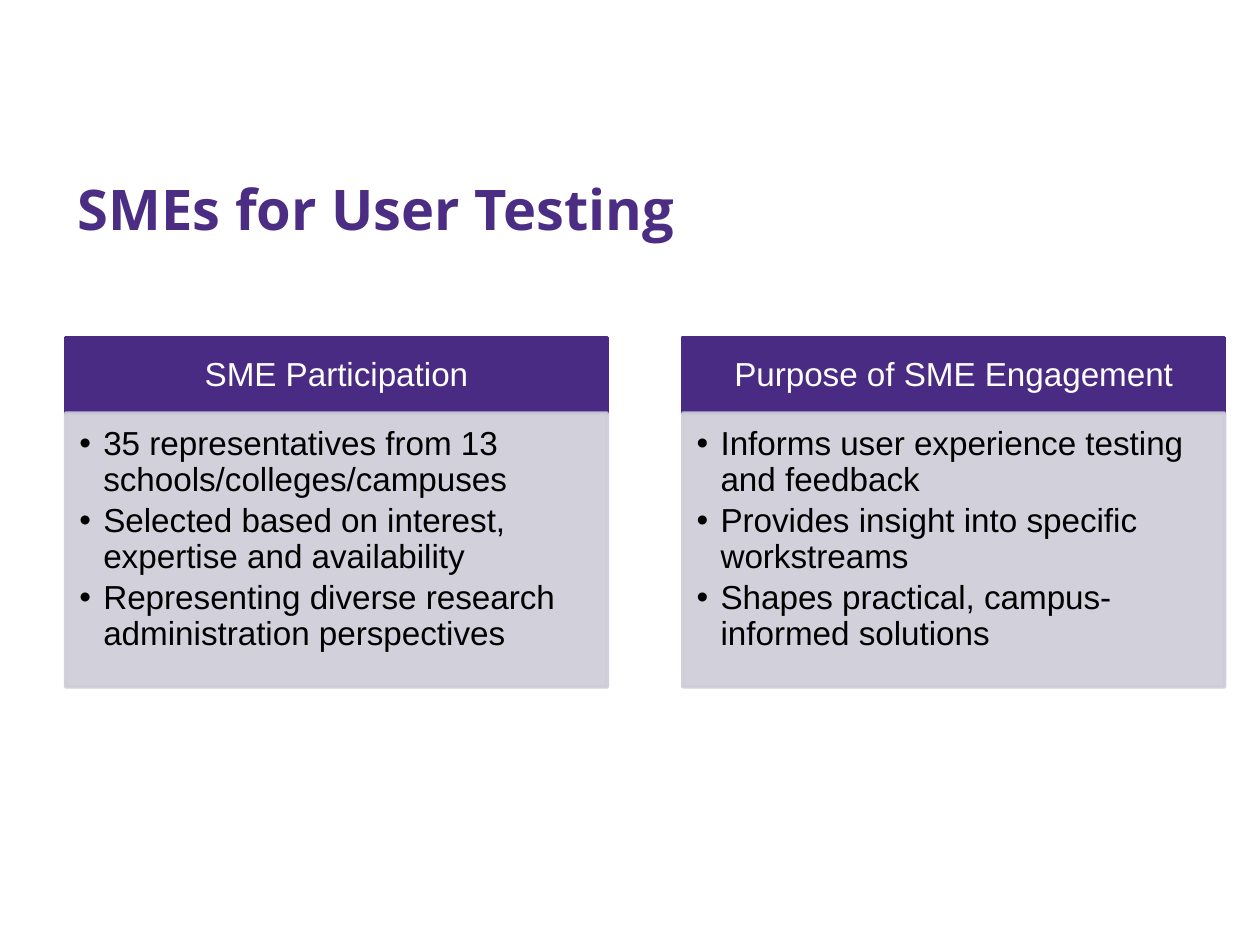
from dataclasses import dataclass

from lxml.etree import SubElement
from pptx import Presentation
from pptx.dml.color import RGBColor
from pptx.enum.shapes import MSO_SHAPE
from pptx.enum.text import MSO_ANCHOR, PP_ALIGN
from pptx.oxml.ns import qn
from pptx.util import Inches, Pt


@dataclass(frozen=True)
class Theme:
    title_color: RGBColor = RGBColor(0x4B, 0x2E, 0x83)
    header_fill: RGBColor = RGBColor(0x4A, 0x2B, 0x83)
    header_text: RGBColor = RGBColor(0xFF, 0xFF, 0xFF)
    body_fill: RGBColor = RGBColor(0xCE, 0xCC, 0xD8)
    body_text: RGBColor = RGBColor(0, 0, 0)
    body_opacity: int = 90
    title_font: str = "Open Sans"
    body_font: str = "Arial"
    title_size: Pt = Pt(32)
    body_size: Pt = Pt(19)
    bullet_indent: Inches = Inches(0.19)
    bullet_gap: Pt = Pt(2.9)
    line_spacing: float = 0.9
    outline: Pt = Pt(2)


@dataclass(frozen=True)
class Box:
    """A region in inches."""
    left: float
    top: float
    width: float
    height: float

    def emu(self):
        return [Inches(n) for n in (self.left, self.top, self.width, self.height)]

    def split_rows(self, share):
        """Cut into an upper part of the given share and the rest."""
        upper = self.height * share
        return (Box(self.left, self.top, self.width, upper),
                Box(self.left, self.top + upper, self.width, self.height - upper))

    def columns(self, count, gap_share):
        """Equal columns, with gaps given as a share of the box width."""
        gap = self.width * gap_share
        width = (self.width - gap * (count - 1)) / count
        return [Box(self.left + i * (width + gap), self.top, width, self.height)
                for i in range(count)]


THEME = Theme()
SLIDE = Box(0, 0, 10, 7.5)
TITLE_BOX = Box(0.052 * SLIDE.width, 0.117 * SLIDE.height,
                0.896 * SLIDE.width, 0.145 * SLIDE.height)
CARDS_BOX = Box(0.052 * SLIDE.width, 0.357 * SLIDE.height,
                0.92 * SLIDE.width, 0.37 * SLIDE.height)
CARD_GAP_SHARE = 0.065
HEADER_SHARE = 0.217

TITLE = "SMEs for User Testing"
CARDS = [
    ("SME Participation", [
        "35 representatives from 13 schools/colleges/campuses",
        "Selected based on interest, expertise and availability",
        "Representing diverse research administration perspectives",
    ]),
    ("Purpose of SME Engagement", [
        "Informs user experience testing and feedback",
        "Provides insight into specific workstreams",
        "Shapes practical, campus-informed solutions",
    ]),
]


def set_frame(frame, anchor, insets):
    """Wrap the text and set its anchor and left, top, right, bottom insets."""
    frame.word_wrap = True
    frame.vertical_anchor = anchor
    (frame.margin_left, frame.margin_top,
     frame.margin_right, frame.margin_bottom) = [Inches(n) for n in insets]


def add_run(paragraph, text, font, size, color, bold=False):
    run = paragraph.add_run()
    run.text = text
    run.font.name = font
    run.font.size = size
    run.font.bold = bold
    run.font.color.rgb = color


def add_panel(slide, box, color, opacity=100):
    shape = slide.shapes.add_shape(MSO_SHAPE.RECTANGLE, *box.emu())
    shape.shadow.inherit = False
    shape.fill.solid()
    shape.line.width = THEME.outline
    for fill in (shape.fill, shape.line.fill):
        fill.solid()
        fill.fore_color.rgb = color
    if opacity < 100:
        for element in shape.element.spPr.iter(qn("a:srgbClr")):
            SubElement(element, qn("a:alpha"), val=str(opacity * 1000))
    return shape


def add_bullet(paragraph):
    properties = paragraph._p.get_or_add_pPr()
    properties.set("marL", str(THEME.bullet_indent))
    properties.set("indent", str(-THEME.bullet_indent))
    color = SubElement(properties, qn("a:buClr"))
    SubElement(color, qn("a:srgbClr"), val=str(THEME.body_text))
    SubElement(properties, qn("a:buFont"), typeface=THEME.body_font)
    SubElement(properties, qn("a:buChar"), char="•")


def add_title(slide, box):
    frame = slide.shapes.add_textbox(*box.emu()).text_frame
    set_frame(frame, MSO_ANCHOR.BOTTOM, (0.1, 0.05, 0.1, 0.05))
    add_run(frame.paragraphs[0], TITLE, THEME.title_font, THEME.title_size,
            THEME.title_color, bold=True)


def add_card_header(slide, box, text):
    frame = add_panel(slide, box, THEME.header_fill).text_frame
    set_frame(frame, MSO_ANCHOR.MIDDLE, (0.15, 0.08, 0.15, 0.08))
    paragraph = frame.paragraphs[0]
    paragraph.alignment = PP_ALIGN.CENTER
    paragraph.line_spacing = THEME.line_spacing
    add_run(paragraph, text, THEME.body_font, THEME.body_size, THEME.header_text)


def add_card_body(slide, box, points):
    frame = add_panel(slide, box, THEME.body_fill, THEME.body_opacity).text_frame
    set_frame(frame, MSO_ANCHOR.TOP, (0.11, 0.11, 0.15, 0.17))
    for index, point in enumerate(points):
        paragraph = frame.add_paragraph() if index else frame.paragraphs[0]
        add_bullet(paragraph)
        paragraph.level = 1
        paragraph.alignment = PP_ALIGN.LEFT
        paragraph.line_spacing = THEME.line_spacing
        if index:
            paragraph.space_before = THEME.bullet_gap
        add_run(paragraph, point, THEME.body_font, THEME.body_size, THEME.body_text)


def add_cards(slide, box):
    columns = box.columns(len(CARDS), CARD_GAP_SHARE)
    for column, (heading, points) in zip(columns, CARDS):
        header, body = column.split_rows(HEADER_SHARE)
        add_card_header(slide, header, heading)
        add_card_body(slide, body, points)


def main():
    presentation = Presentation()
    presentation.slide_width = Inches(SLIDE.width)
    presentation.slide_height = Inches(SLIDE.height)
    slide = presentation.slides.add_slide(presentation.slide_layouts[6])
    add_title(slide, TITLE_BOX)
    add_cards(slide, CARDS_BOX)
    presentation.save("out.pptx")


if __name__ == "__main__":
    main()
